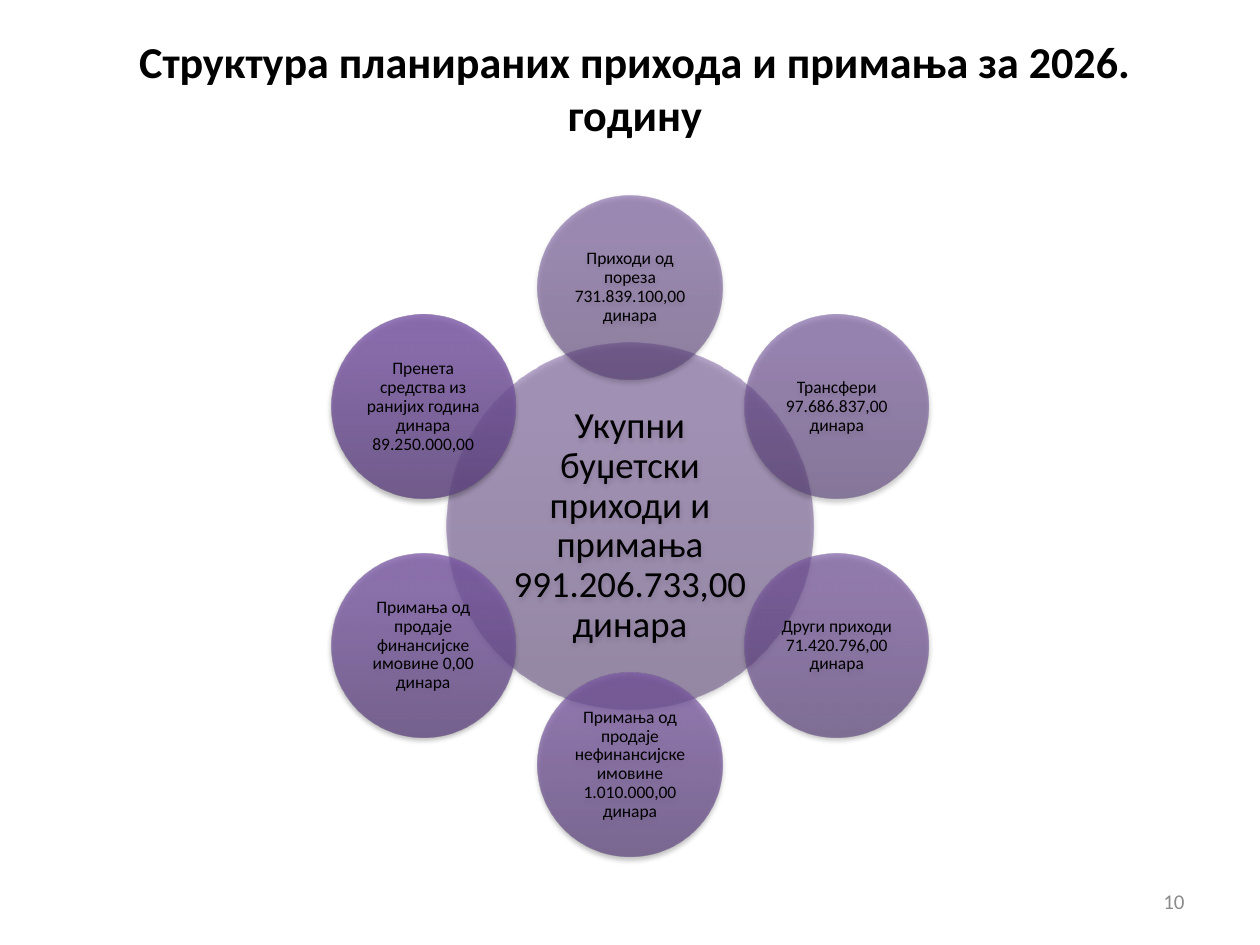
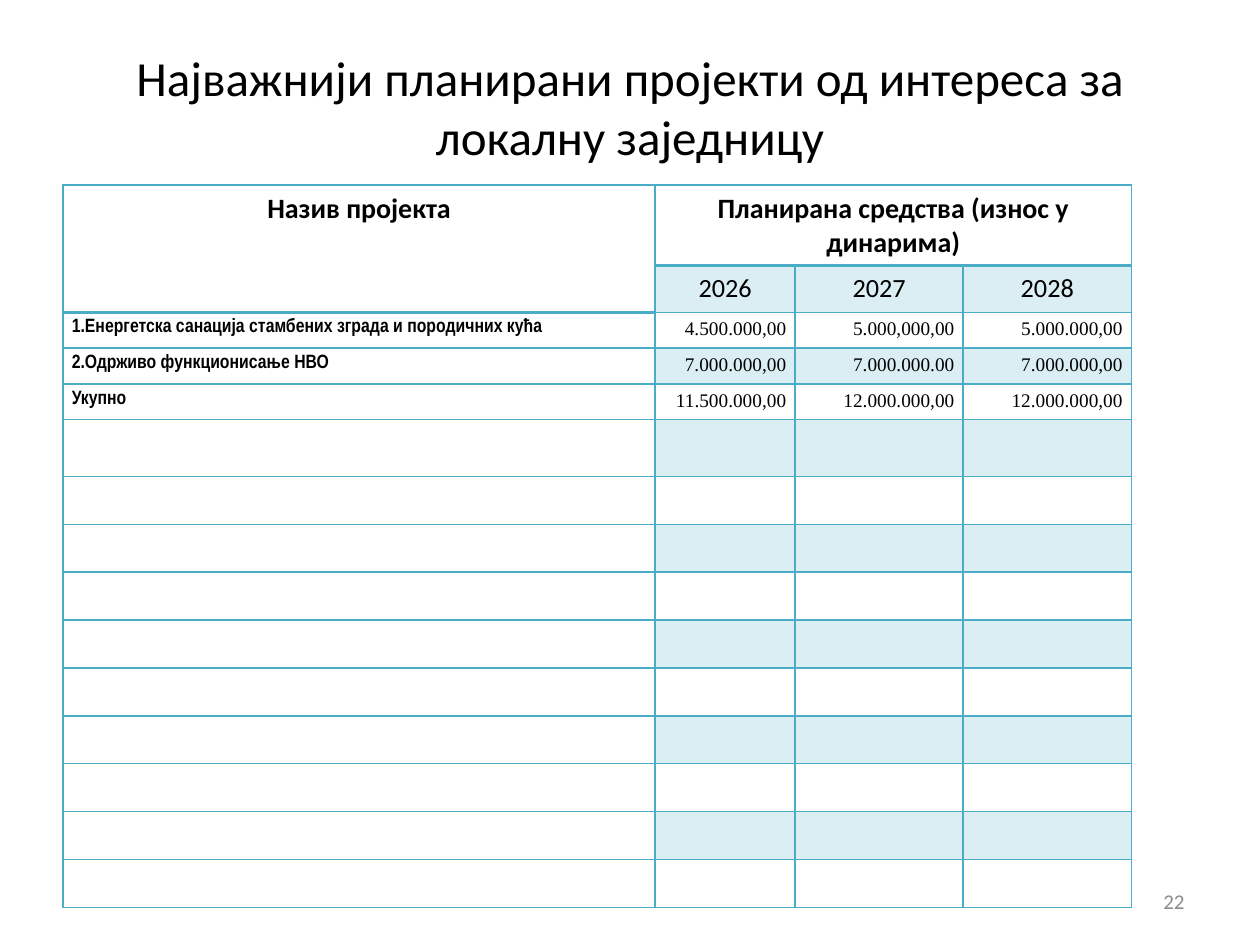
"""Build two budget slides: a ring of revenue circles and a table of projects."""
from dataclasses import dataclass
from itertools import product
from math import cos, radians, sin

from lxml import etree
from pptx import Presentation
from pptx.dml.color import RGBColor
from pptx.enum.shapes import MSO_SHAPE
from pptx.enum.text import MSO_ANCHOR, MSO_AUTO_SIZE, PP_ALIGN
from pptx.oxml.ns import qn
from pptx.util import Inches, Pt

ELLIPSE = MSO_SHAPE.OVAL
MIDDLE = MSO_ANCHOR.MIDDLE
NO_FIT = MSO_AUTO_SIZE.NONE
LEFT, CENTER, RIGHT = PP_ALIGN.LEFT, PP_ALIGN.CENTER, PP_ALIGN.RIGHT
COLUMNS, ROWS = 20, 15
TITLE_ONLY = 5


@dataclass(frozen=True)
class Theme:
    ink: str = "000000"
    muted: str = "8B8B8B"
    accent: str = "4BACC6"
    band_alpha: int = 20
    thin: float = 0.96
    thick: float = 1.98
    body: str = "Calibri"
    label: str = "Arial Narrow"
    figure: str = "Times New Roman"
    footer_size: float = 12
    hub_size: float = 21
    petal_size: float = 10
    head_size: float = 16
    year_size: float = 15
    row_size: float = 11
    shades: tuple = (
        (0, "563D74", "5F4580"),
        (80, "705097", "7C59A6"),
        (100, "704F99", "7C58A8"),
    )


THEME = Theme()

HUB = "Укупни буџетски приходи и примања 991.206.733,00 динара"
PETALS = [
    "Приходи од пореза 731.839.100,00 динара",
    "Трансфери 97.686.837,00 динара",
    "Други приходи 71.420.796,00 динара",
    "Примања од продаје нефинансијске имовине 1.010.000,00 динара",
    "Примања од продаје финансијске имовине 0,00 динара",
    "Пренета средства из ранијих година динара 89.250.000,00",
]
PROJECTS = [
    ["Назив пројекта", "Планирана средства (износ у динарима)", "", ""],
    ["", "2026", "2027", "2028"],
    ["1.Енергетска санација стамбених зграда и породичних кућа",
     "4.500.000,00", "5.000,000,00", "5.000.000,00"],
    ["2.Одрживо функционисање НВО",
     "7.000.000,00", "7.000.000.00", "7.000.000,00"],
    ["Укупно", "11.500.000,00", "12.000.000,00", "12.000.000,00"],
] + [[""] * 4] * 10
PROJECT_COLUMNS = [9.4, 2.22, 2.67, 2.67]
PROJECT_ROWS = [1.28, 0.74] + [0.55] * 3 + [0.9] + [0.76] * 9


def assign(target, values):
    for name, value in values.items():
        setattr(target, name, value)


def add_node(parent, tag, **attributes):
    texts = {name: str(value) for name, value in attributes.items()}
    return etree.SubElement(parent, qn(f"a:{tag}"), texts)


def add_color(parent, color, alpha=100):
    node = add_node(parent, "srgbClr", val=color)
    add_node(node, "alpha", val=alpha * 1000)


def blend(start, end, share):
    pairs = zip(RGBColor.from_string(start), RGBColor.from_string(end))
    return "".join(f"{round(a + (b - a) * share):02X}" for a, b in pairs)


class Deck:
    """Hold the theme and the current page, and draw each kind of element."""

    def __init__(self, theme):
        self.theme = theme
        self.show = Presentation()
        assign(self.show, {"slide_width": Inches(10), "slide_height": Inches(7.5)})
        self.page = None

    def across(self, columns):
        return round(self.show.slide_width * columns / COLUMNS)

    def down(self, rows):
        return round(self.show.slide_height * rows / ROWS)

    def place(self, left, top, width, height):
        return (self.across(left), self.down(top),
                self.across(width), self.down(height))

    def set_text(self, frame, text, size, align, font=None, bold=False, color=None,
                 spacing=None):
        para = frame.paragraphs[0]
        assign(para, {"alignment": align, **(spacing or {})})
        if not text:
            add_node(para._p, "endParaRPr", sz=round(size * 100))
            return
        span = para.add_run()
        span.text = text
        assign(span.font, {"name": font or self.theme.body, "size": Pt(size),
                           "bold": bold})
        span.font.color.rgb = RGBColor.from_string(color or self.theme.ink)

    def add_page(self, title, box, size, number, bold=False):
        layout = self.show.slide_layouts[TITLE_ONLY]
        self.page = self.show.slides.add_slide(layout)
        heading = self.page.shapes.title
        assign(heading, dict(zip(("left", "top", "width", "height"),
                                 self.place(*box))))
        assign(heading.text_frame, {"auto_size": NO_FIT, "word_wrap": True,
                                    "vertical_anchor": MIDDLE})
        self.set_text(heading.text_frame, title, size, CENTER, bold=bold)
        footer = self.page.shapes.add_textbox(*self.place(14.34, 13.9, 4.66, 0.8))
        assign(footer.text_frame, {"word_wrap": True, "vertical_anchor": MIDDLE})
        self.set_text(footer.text_frame, number, self.theme.footer_size, RIGHT,
                      color=self.theme.muted)

    def add_circle(self, center, diameter, text, size, share, inset):
        x, y = center
        circle = self.page.shapes.add_shape(ELLIPSE, *self.place(
            x - diameter / 2, y - diameter / 2, diameter, diameter))
        circle.line.fill.background()
        circle.shadow.inherit = False
        self.shade(circle, share)
        margins = dict.fromkeys(("margin_left", "margin_right", "margin_top",
                                 "margin_bottom"), self.across(inset))
        assign(circle.text_frame, {"word_wrap": True, "vertical_anchor": MIDDLE,
                                   **margins})
        self.set_text(circle.text_frame, text, size, CENTER,
                      spacing={"line_spacing": 0.9, "space_after": Pt(size * 0.35)})

    def shade(self, circle, share):
        circle.fill.gradient()
        gradient = circle._element.spPr.find(qn("a:gradFill"))
        for child in list(gradient):
            gradient.remove(child)
        stops = add_node(gradient, "gsLst")
        for position, start, end in self.theme.shades:
            stop = add_node(stops, "gs", pos=position * 1000)
            add_color(stop, blend(start, end, share), round(50 + 30 * share))
        add_node(gradient, "lin", ang=270 * 60000, scaled=0)
        effects = circle._element.spPr.find(qn("a:effectLst"))
        shadow = add_node(effects, "outerShdw", blurRad=Pt(3.1), dist=Pt(1.8),
                          dir=90 * 60000, rotWithShape=0)
        add_color(shadow, self.theme.ink, 35)

    def add_grid(self, left, top, widths, heights):
        grid = self.page.shapes.add_table(len(heights), len(widths), *self.place(
            left, top, sum(widths), sum(heights))).table
        assign(grid, {"first_row": False, "horz_banding": False})
        for column, width in zip(grid.columns, widths):
            column.width = self.across(width)
        for row, height in zip(grid.rows, heights):
            row.height = self.down(height)
        return grid

    def style_cell(self, cell, widths, banded):
        assign(cell, {"margin_left": self.across(0.14),
                      "margin_right": self.across(0.14),
                      "margin_top": self.down(0.1),
                      "margin_bottom": self.down(0.1)})
        properties = cell._tc.get_or_add_tcPr()
        for side, width in widths.items():
            line = add_node(properties, f"ln{side}", w=Pt(width))
            add_color(add_node(line, "solidFill"), self.theme.accent)
        if not banded:
            cell.fill.background()
            return
        cell.fill.solid()
        cell.fill.fore_color.rgb = RGBColor.from_string(self.theme.accent)
        color = properties.find(qn("a:solidFill"))[0]
        add_node(color, "alpha", val=self.theme.band_alpha * 1000)


def project_format(theme, row, column):
    if row == 0:
        return {"size": theme.head_size, "align": CENTER, "bold": True}
    if row == 1:
        return {"size": theme.year_size, "align": CENTER}
    if column == 0:
        return {"size": theme.row_size, "align": LEFT, "font": theme.label,
                "bold": True}
    return {"size": theme.row_size, "align": RIGHT, "font": theme.figure}


def build_revenue(deck):
    deck.add_page("Структура планираних прихода и примања за 2026. годину",
                  (1.08, 0.54, 18, 1.7), 25.2, "10", bold=True)
    x, y, orbit = 10, 8.35, 3.79
    deck.add_circle((x, y), 5.82, HUB, deck.theme.hub_size, 0, 0.06)
    for index, text in enumerate(PETALS):
        angle = radians(360 / len(PETALS) * index - 90)
        center = (x + orbit * cos(angle), y + orbit * sin(angle))
        deck.add_circle(center, 2.92, text, deck.theme.petal_size,
                        (index + 1) / len(PETALS), 0.02)


def build_projects(deck):
    deck.add_page("Најважнији планирани пројекти од интереса за локалну заједницу",
                  (1, 0.6, 18, 2.18), 28, "22")
    grid = deck.add_grid(1, 2.94, PROJECT_COLUMNS, PROJECT_ROWS)
    grid.cell(0, 0).merge(grid.cell(1, 0))
    grid.cell(0, 1).merge(grid.cell(0, 3))
    thin, thick = deck.theme.thin, deck.theme.thick
    for row, column in product(range(len(PROJECT_ROWS)), range(len(PROJECT_COLUMNS))):
        cell = grid.cell(row, column)
        head_edge = 1 if column else 2
        bottom_edge = row + cell.span_height
        widths = {"L": thin, "R": thin,
                  "T": thick if row == head_edge else thin,
                  "B": thick if bottom_edge == head_edge else thin}
        deck.style_cell(cell, widths, banded=column > 0 and row % 2 == 1)
        deck.set_text(cell.text_frame, PROJECTS[row][column],
                      **project_format(deck.theme, row, column))


def main():
    deck = Deck(THEME)
    build_revenue(deck)
    build_projects(deck)
    deck.show.save("out.pptx")


if __name__ == "__main__":
    main()
